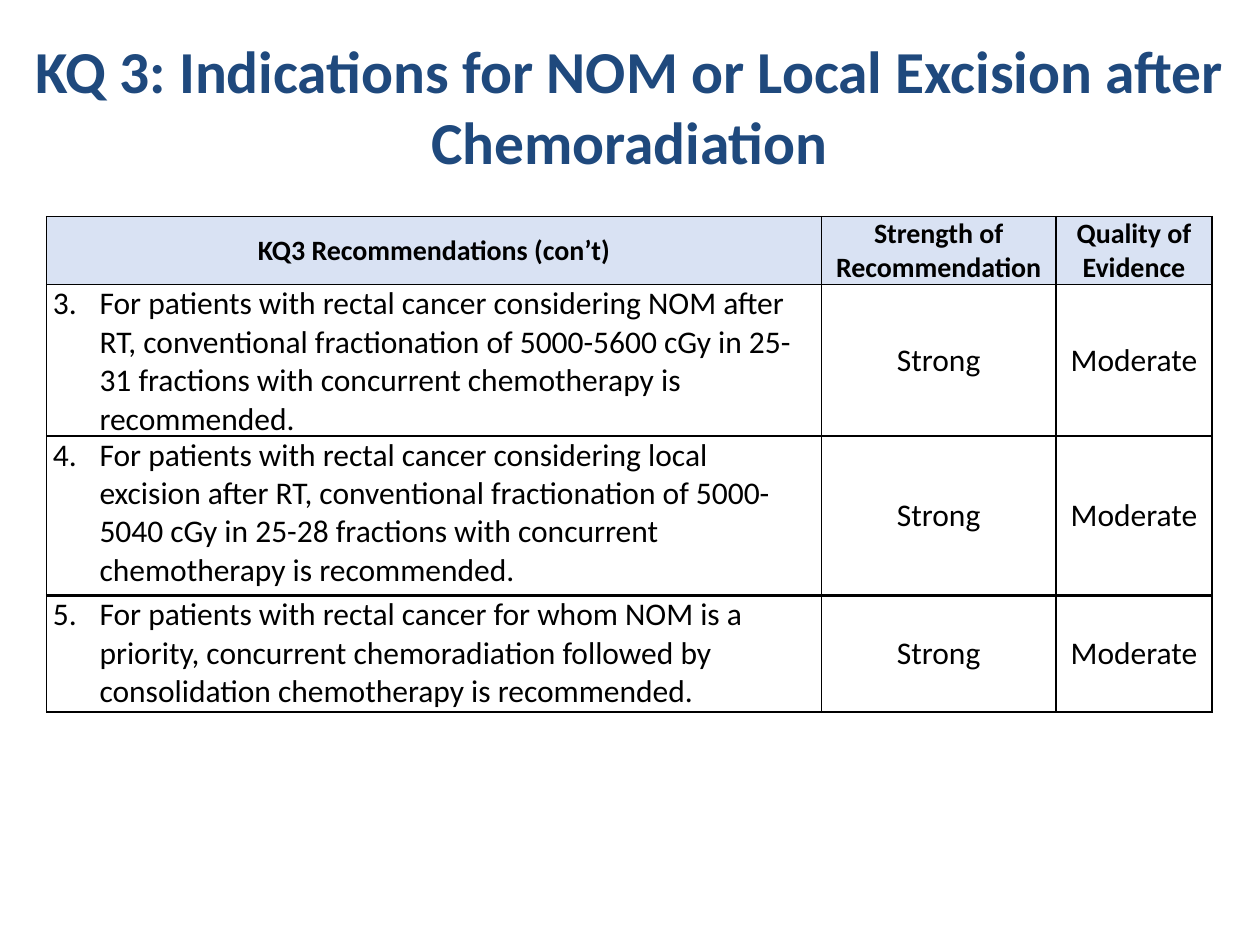
from dataclasses import dataclass

from pptx import Presentation
from pptx.dml.color import RGBColor as RGB
from pptx.enum.text import MSO_ANCHOR as Anchor, PP_ALIGN as Align
from pptx.oxml import parse_xml
from pptx.oxml.ns import nsdecls
from pptx.util import Inches, Pt


@dataclass(frozen=True)
class Theme:
    font: str = "Calibri"
    navy: str = "1F497D"
    black: str = "000000"
    pale: str = "D9E2F3"
    title: int = 34
    head: int = 16
    body: int = 18
    rule: int = 1


THEME = Theme()
COLS = (6.15, 1.86, 1.24)
HEAD = ("KQ3 Recommendations (con’t)", "Strength of Recommendation",
        "Quality of Evidence")
ADVICE = (
    ("3.\tFor patients with rectal cancer considering NOM after RT, "
     "conventional fractionation of 5000-5600 cGy in 25-31 fractions "
     "with concurrent chemotherapy is recommended.", "Strong", "Moderate"),
    ("4.\tFor patients with rectal cancer considering local excision after RT, "
     "conventional fractionation of 5000-5040 cGy in 25-28 fractions "
     "with concurrent chemotherapy is recommended.", "Strong", "Moderate"),
    ("5.\tFor patients with rectal cancer for whom NOM is a priority, "
     "concurrent chemoradiation followed by consolidation chemotherapy "
     "is recommended.", "Strong", "Moderate"),
)


def add_run(para, text, size, color, bold=False):
    run = para.add_run()
    run.text = text
    font = run.font
    font.name, font.size, font.bold = THEME.font, Pt(size), bold
    font.color.rgb = RGB.from_string(color)


def add_title(slide, left, top, width, height):
    box = slide.shapes.add_textbox(
        Inches(left), Inches(top), Inches(width), Inches(height))
    frame = box.text_frame
    frame.word_wrap = True
    frame.vertical_anchor = Anchor.TOP
    para = frame.paragraphs[0]
    para.alignment = Align.CENTER
    add_run(para, "KQ 3: Indications for NOM or Local Excision after "
            "Chemoradiation", THEME.title, THEME.navy, True)


def add_rules(cell):
    # Borders come before the fill in the cell properties
    props = cell._tc.get_or_add_tcPr()
    for spot, side in enumerate(("lnL", "lnR", "lnT", "lnB")):
        props.insert(spot, parse_xml(
            f'<a:{side} {nsdecls("a")} w="{Pt(THEME.rule)}"><a:solidFill>'
            f'<a:srgbClr val="{THEME.black}"/></a:solidFill></a:{side}>'))


def fill_cell(cell, text, head, item):
    cell.margin_left = cell.margin_right = Inches(0.05)
    cell.margin_top = cell.margin_bottom = 0
    cell.vertical_anchor = Anchor.TOP if item else Anchor.MIDDLE
    if head:
        cell.fill.solid()
        cell.fill.fore_color.rgb = RGB.from_string(THEME.pale)
    else:
        cell.fill.background()
    add_rules(cell)
    para = cell.text_frame.paragraphs[0]
    para.alignment = Align.LEFT if item else Align.CENTER
    if item:
        # Hanging indent for the number
        props = para._p.get_or_add_pPr()
        props.set("marL", str(Inches(0.37)))
        props.set("indent", str(-Inches(0.37)))
    add_run(para, text, THEME.head if head else THEME.body, THEME.black, head)


def add_grid(slide, left, top, rows, highs, headed=False):
    grid = slide.shapes.add_table(
        len(rows), len(COLS), Inches(left), Inches(top),
        Inches(sum(COLS)), Inches(sum(highs))).table
    grid.first_row = headed
    grid.horz_banding = False
    for col, wide in zip(grid.columns, COLS):
        col.width = Inches(wide)
    for r, (row, high) in enumerate(zip(rows, highs)):
        grid.rows[r].height = Inches(high)
        head = headed and r == 0
        for c, text in enumerate(row):
            fill_cell(grid.cell(r, c), text, head, c == 0 and not head)


def main():
    deck = Presentation()
    deck.slide_width, deck.slide_height = Inches(10), Inches(7.5)
    slide = deck.slides.add_slide(deck.slide_layouts[6])
    add_title(slide, 0.05, 0.22, 9.89, 1.86)
    # Headed table, then the last advice in a table of its own
    add_grid(slide, 0.37, 1.72, (HEAD, *ADVICE[:2]), (0.54, 1.16, 1.26), True)
    add_grid(slide, 0.37, 4.73, ADVICE[2:], (0.92,))
    deck.save("out.pptx")


if __name__ == "__main__":
    main()
